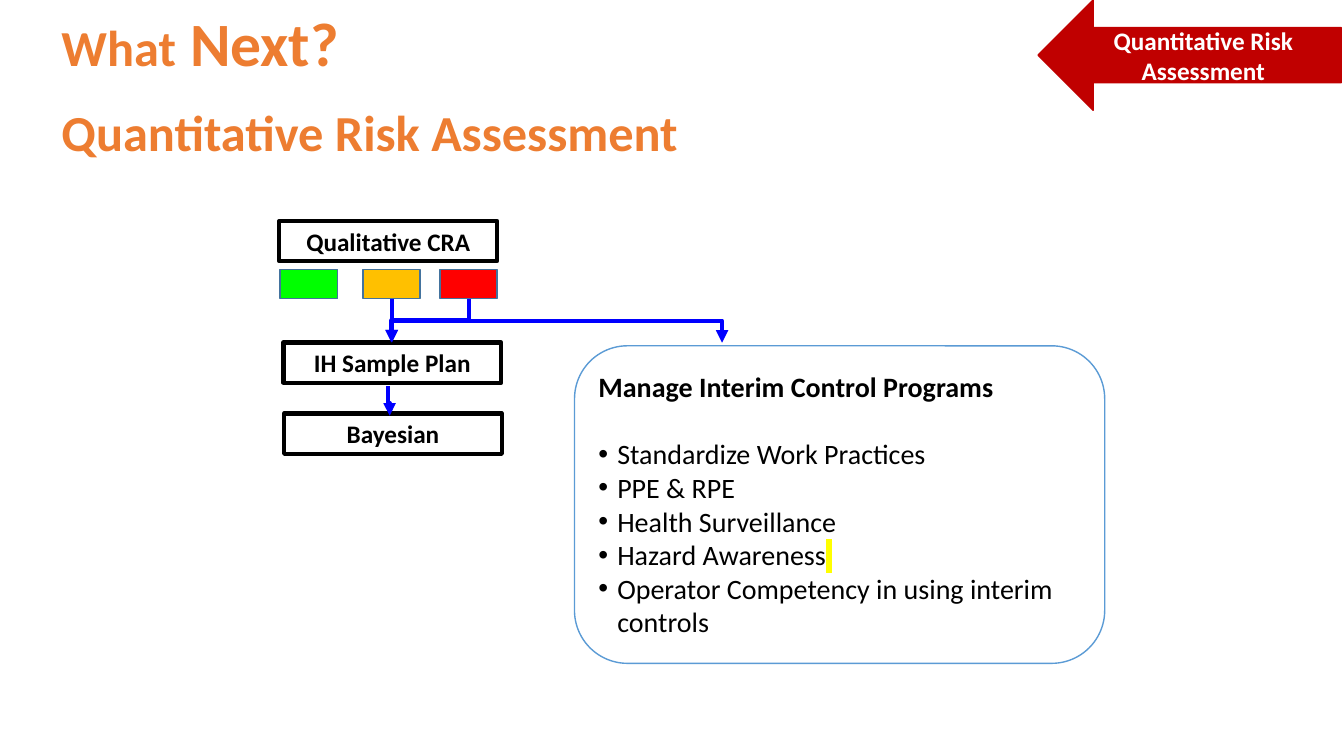
from typing import NamedTuple

from lxml.etree import SubElement
from pptx import Presentation
from pptx.dml.color import RGBColor
from pptx.enum.dml import MSO_LINE
from pptx.enum.shapes import MSO_CONNECTOR, MSO_SHAPE
from pptx.enum.text import MSO_ANCHOR, MSO_AUTO_SIZE, PP_ALIGN
from pptx.oxml.ns import qn
from pptx.util import Pt

FONT = "Calibri"
BLACK, WHITE, ORANGE, BLUE = "000000", "FFFFFF", "ED7D31", "0000FF"
CRIMSON, EDGE, SKY, YELLOW = "C00000", "43739E", "5B9BD5", "FFFF00"


class Block(NamedTuple):
    kind: MSO_SHAPE
    left: float
    top: float
    width: float
    height: float
    fill: str | None
    line: str
    weight: float
    text: str = ""
    ink: str = BLACK


class Elbow(NamedTuple):
    x1: float
    y1: float
    x2: float
    y2: float
    bend: float = 0.5
    upright: bool = True


STEPS = [
    Block(MSO_SHAPE.RECTANGLE, left, top, 155.5, 28.8, None, BLACK, 3, text)
    for left, top, text in [
        (199.6, 157.8, "Qualitative CRA"),
        (202.5, 244.6, "IH Sample Plan"),
        (203, 295.4, "Bayesian"),
    ]
]
RATINGS = [
    Block(MSO_SHAPE.RECTANGLE, left, 192.7, 41, 20.7, fill, EDGE, 1)
    for left, fill in [(200, "00FF00"), (259.2, "FFC000"), (314.2, "FF0000")]
]
PANEL = Block(MSO_SHAPE.ROUNDED_RECTANGLE, 410.4, 247, 378.7, 226.8, WHITE, SKY, 1)
BANNER = Block(MSO_SHAPE.LEFT_ARROW, 741.5, 0, 216.5, 78.8, CRIMSON, CRIMSON, 1,
               "Quantitative Risk Assessment", WHITE)
FLOWS = [
    Elbow(280, 213.4, 279.6, 244.6),
    Elbow(334.8, 213.4, 280, 244.6),
    Elbow(277.2, 275.8, 278.4, 297, 0.58),
    Elbow(290, 229, 515.8, 244.8, 1, False),
]
CONTROLS = [
    "Standardize Work Practices",
    "PPE & RPE",
    "Health Surveillance",
    "Hazard Awareness",
    "Operator Competency in using interim controls",
]


def tint(code: str) -> RGBColor:
    return RGBColor.from_string(code)


def add_run(para, text: str, size: float, ink: str, bold: bool = True):
    run = para.add_run()
    run.text = text
    font = run.font
    font.name, font.size, font.bold = FONT, Pt(size), bold
    font.color.rgb = tint(ink)
    return run


def mark(run, ink: str) -> None:
    """Highlight the run's background."""
    fill = run.font._element.find(qn("a:solidFill"))
    glow = SubElement(run.font._element, qn("a:highlight"))
    SubElement(glow, qn("a:srgbClr")).set("val", ink)
    fill.addnext(glow)


def place(shape, left: float, top: float, width: float, height: float) -> None:
    shape.left, shape.top = Pt(left), Pt(top)
    shape.width, shape.height = Pt(width), Pt(height)


def draw_block(slide, item: Block) -> None:
    shape = slide.shapes.add_shape(
        item.kind, Pt(item.left), Pt(item.top), Pt(item.width), Pt(item.height))
    shape.shadow.inherit = False
    if item.fill:
        shape.fill.solid()
        shape.fill.fore_color.rgb = tint(item.fill)
    else:
        shape.fill.background()
    shape.line.color.rgb = tint(item.line)
    shape.line.width = Pt(item.weight)
    if item.text:
        frame = shape.text_frame
        frame.word_wrap = True
        frame.vertical_anchor = MSO_ANCHOR.MIDDLE
        para = frame.paragraphs[0]
        para.alignment = PP_ALIGN.CENTER
        add_run(para, item.text, 18, item.ink)


def draw_elbow(slide, flow: Elbow) -> None:
    """Draw a bent arrow; an upright one is a level one turned a quarter."""
    x1, y1, x2, y2, bend, upright = flow
    if upright:
        midx, midy = (x1 + x2) / 2, (y1 + y2) / 2
        dx, dy = (x2 - x1) / 2, (y2 - y1) / 2
        x1, y1, x2, y2 = midx - dy, midy + dx, midx + dy, midy - dx
    link = slide.shapes.add_connector(
        MSO_CONNECTOR.ELBOW, Pt(x1), Pt(y1), Pt(x2), Pt(y2))
    link.line.color.rgb = tint(BLUE)
    link.line.width = Pt(3)
    link.line.dash_style = MSO_LINE.SOLID
    props = link._element.spPr
    if upright:
        props.find(qn("a:xfrm")).set("rot", "5400000")
    guide = SubElement(props.find(qn("a:prstGeom")).find(qn("a:avLst")), qn("a:gd"))
    guide.set("name", "adj1")
    guide.set("fmla", f"val {round(bend * 100000)}")
    SubElement(props.find(qn("a:ln")), qn("a:tailEnd")).set("type", "triangle")
    SubElement(props, qn("a:effectLst"))


def write_title(slide) -> None:
    title = slide.shapes.title
    place(title, 36.7, 3.6, 597, 118.8)
    frame = title.text_frame
    frame.auto_size = MSO_AUTO_SIZE.NONE
    frame.vertical_anchor = MSO_ANCHOR.MIDDLE
    first, second = frame.paragraphs[0], frame.add_paragraph()
    for para in (first, second):
        para.alignment = PP_ALIGN.LEFT
        para.line_spacing = 0.9
    second.space_before = Pt(20)
    add_run(first, "What", 36, ORANGE)
    add_run(first, " Next?", 44, ORANGE)
    add_run(second, "Quantitative Risk Assessment", 36, ORANGE)


def set_bullet(para, indent: float) -> None:
    """Hang a round bullet by the indent, or clear it when the indent is 0."""
    props = para._p.get_or_add_pPr()
    props.set("marL", str(Pt(indent)))
    props.set("indent", str(-Pt(indent)))
    if indent:
        SubElement(props, qn("a:buFont")).set("typeface", "Arial")
        SubElement(props, qn("a:buChar")).set("char", "•")
    else:
        SubElement(props, qn("a:buNone"))


def write_list(slide) -> None:
    body = slide.placeholders[1]
    inset = 11
    place(body, PANEL.left + inset, PANEL.top + inset,
          PANEL.width - 2 * inset, PANEL.height - 2 * inset)
    frame = body.text_frame
    frame.auto_size = MSO_AUTO_SIZE.NONE
    frame.vertical_anchor = MSO_ANCHOR.TOP
    frame.margin_left = frame.margin_right = Pt(6)
    frame.margin_top = frame.margin_bottom = Pt(6)
    head = frame.paragraphs[0]
    head.space_before, head.space_after = Pt(0), Pt(24)
    set_bullet(head, 0)
    add_run(head, "Manage Interim Control Programs", 20, BLACK)
    for text in CONTROLS:
        para = frame.add_paragraph()
        para.space_before = Pt(0)
        set_bullet(para, 13.5)
        add_run(para, text, 20, BLACK, False)
        if text == "Hazard Awareness":
            mark(add_run(para, " ", 20, BLACK, False), YELLOW)


def main() -> None:
    deck = Presentation()
    deck.slide_width, deck.slide_height = Pt(960), Pt(540)
    slide = deck.slides.add_slide(deck.slide_layouts[1])
    write_title(slide)
    for item in [*STEPS, *RATINGS, PANEL, BANNER]:
        draw_block(slide, item)
    for flow in FLOWS:
        draw_elbow(slide, flow)
    write_list(slide)
    tree = slide.shapes._spTree
    tree.append(slide.placeholders[1]._element)
    deck.save("out.pptx")


if __name__ == "__main__":
    main()
